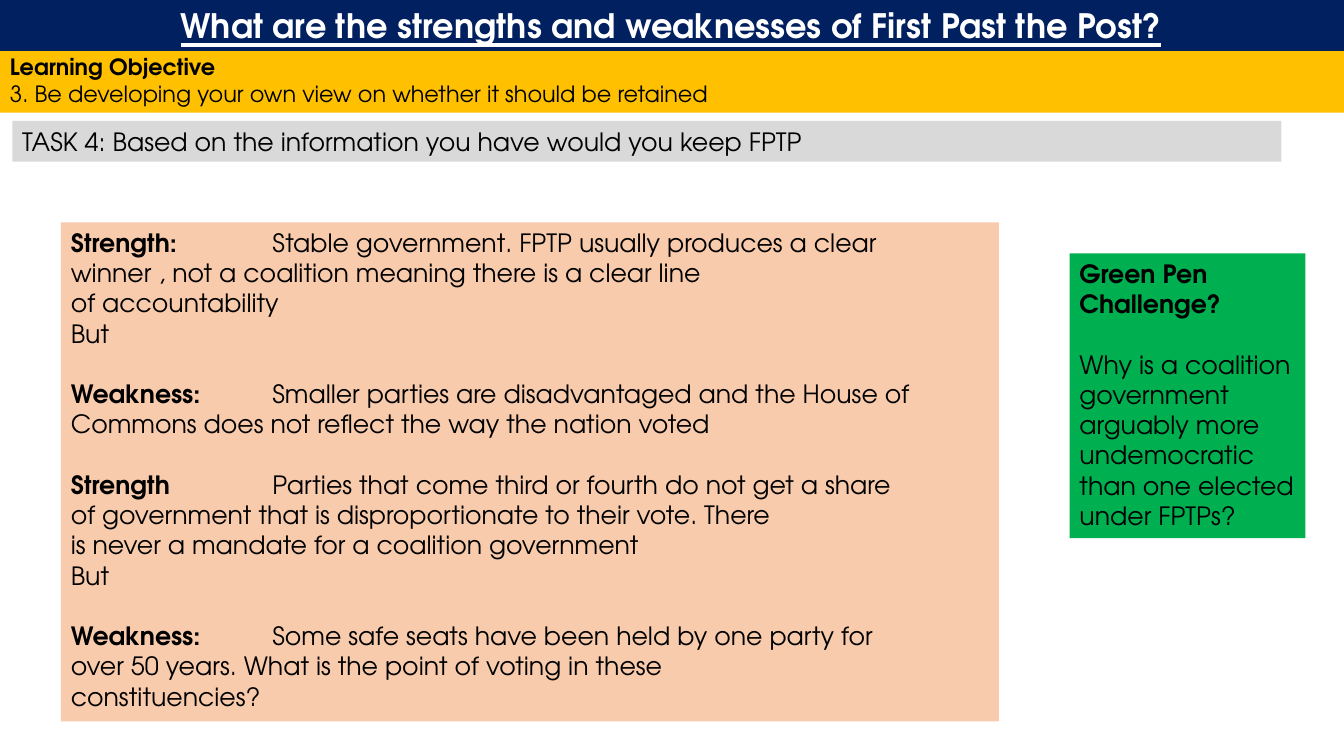
from lxml import etree
from pptx import Presentation
from pptx import util as u
from pptx.dml import color
from pptx.enum import text
from pptx.oxml import ns

FONT = "TeX Gyre Adventor"
LINE = 21.6  # height of one 18 pt line


def rgb(code):
    return color.RGBColor.from_string(code)


def add_panel(place, fill, paragraphs, size=18, ink="000000", underline=None):
    """Add a filled text box; each paragraph is (space before, [(words, bold)])."""
    box = page.shapes.add_textbox(*[u.Pt(length) for length in place])
    box.fill.solid()
    box.fill.fore_color.rgb = rgb(fill)
    frame = box.text_frame
    frame.word_wrap = True
    frame.auto_size = text.MSO_AUTO_SIZE.SHAPE_TO_FIT_TEXT
    for index, (gap, spans) in enumerate(paragraphs):
        para = frame.paragraphs[0] if index == 0 else frame.add_paragraph()
        if gap:
            para.space_before = u.Pt(gap)
        for words, bold in spans:
            for number, line in enumerate(words.split("\n")):
                if number:
                    para.add_line_break()
                span = para.add_run()
                span.text = line
                span.font.name = FONT
                span.font.size = u.Pt(size)
                span.font.bold = bold
                span.font.underline = underline
                span.font.color.rgb = rgb(ink)
    return frame


deck = Presentation()
deck.slide_width, deck.slide_height = u.Pt(960), u.Pt(540)
page = deck.slides.add_slide(deck.slide_layouts[6])

add_panel((8.8, 86.4, 906.5, 29), "D9D9D9", [
    (0, [("TASK 4: Based on the information you have would you keep FPTP", False)]),
])

add_panel((764, 181, 168.5, 203.5), "00B050", [
    (0, [("Green Pen Challenge?", True)]),
    (LINE, [("Why is a coalition government arguably more undemocratic "
             "than one elected under FPTPs?", False)]),
])

points = [
    ("Strength:", "Stable government. FPTP usually produces a clear\n"
     "winner , not a coalition meaning there is a clear line\nof accountability"),
    (None, "But"),
    ("Weakness:", "Smaller parties are disadvantaged and the House of\n"
     "Commons does not reflect the way the nation voted"),
    ("Strength", "Parties that come third or fourth do not get a share\n"
     "of government that is disproportionate to their vote. There\n"
     "is never a mandate for a coalition government"),
    (None, "But"),
    ("Weakness:", "Some safe seats have been held by one party for\n"
     "over 50 years. What is the point of voting in these\nconstituencies?"),
]
arguments = []
for label, words in points:
    if label:
        gap = LINE if arguments else 0
        arguments.append((gap, [(label, True), ("\t" + words, False)]))
    else:
        arguments.append((0, [(words, False)]))
frame = add_panel((43.5, 158.8, 670, 356.5), "F8CBAD", arguments)
for para in frame.paragraphs:
    stops = etree.SubElement(para._p.get_or_add_pPr(), ns.qn("a:tabLst"))
    etree.SubElement(stops, ns.qn("a:tab"), pos=str(u.Pt(144)), algn="l")

add_panel((0, 34.5, 960, 46), "FFC000", [
    (0, [("Learning Objective", True)]),
    (0, [("3. Be developing your own view on whether it should be retained", False)]),
], size=16)

title = add_panel((-1.5, 0, 961.5, 36.3), "002060", [
    (0, [("What are the strengths and weaknesses of First Past the Post?", True)]),
], size=24, ink="FFFFFF", underline=True)
title.paragraphs[0].alignment = text.PP_ALIGN.CENTER

deck.save("out.pptx")
